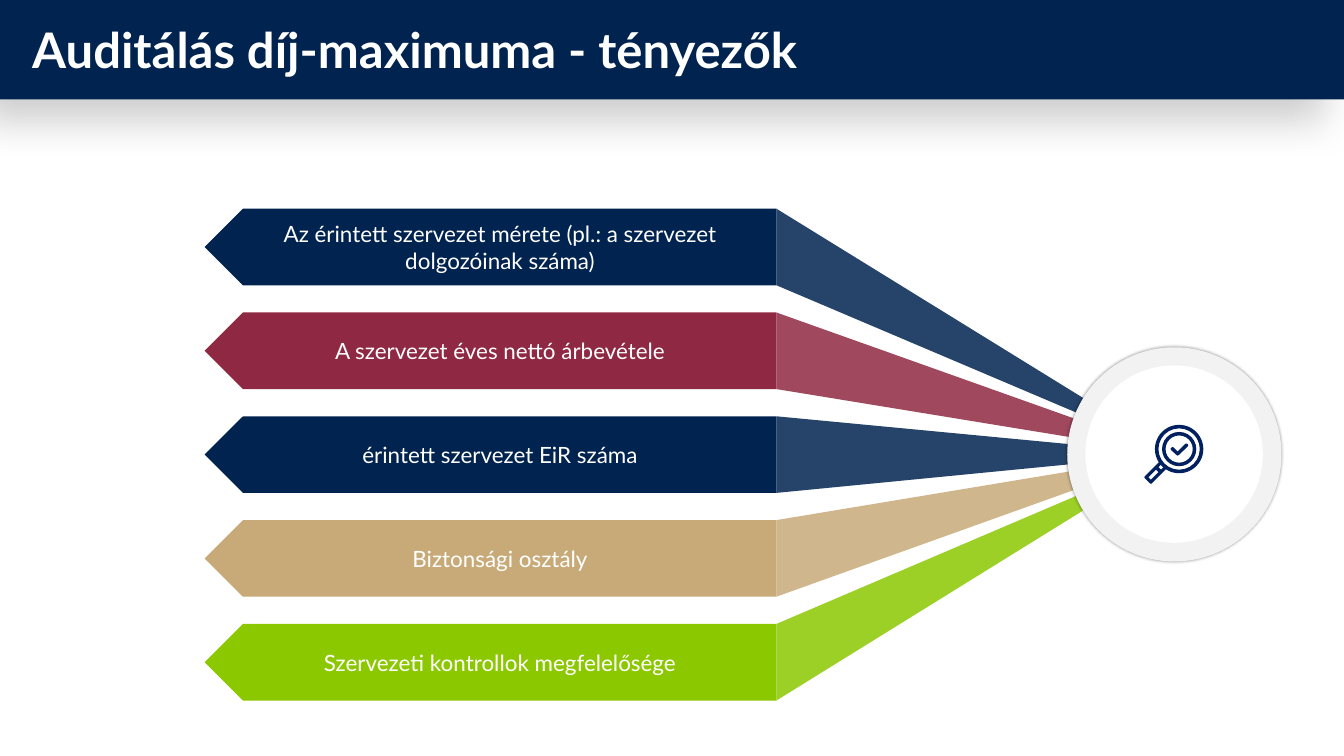
from dataclasses import dataclass

from lxml.etree import SubElement
from pptx import Presentation
from pptx.dml.color import RGBColor
from pptx.enum.shapes import MSO_SHAPE as Shape
from pptx.enum.text import MSO_ANCHOR as Anchor, MSO_AUTO_SIZE as AutoSize, PP_ALIGN as Align
from pptx.oxml.ns import qn
from pptx.util import Pt

PX = 9144  # EMU per px, at 100 px to the inch


@dataclass(frozen=True)
class Theme:
    font: str = "Lato"
    navy: str = "00234F"
    wine: str = "8F2842"
    sand: str = "C8AA78"
    green: str = "8BC800"
    icon: str = "002060"
    rim: str = "F2F2F2"
    white: str = "FFFFFF"
    black: str = "000000"
    title_size: int = 70
    label_size: int = 32


THEME = Theme()
PAGE_W, PAGE_H = 2666, 1500

# Arrow rows and the point where their beams meet
ROW_LEFT, ROW_TOP, ROW_W, ROW_H, ROW_PITCH = 406, 414, 1134, 152, 206
FOCUS = (2329, 901)
FACTORS = [
    ("Az érintett szervezet mérete (pl.: a szervezet dolgozóinak száma)", THEME.navy),
    ("A szervezet éves nettó árbevétele", THEME.wine),
    ("érintett szervezet EiR száma", THEME.navy),
    ("Biztonsági osztály", THEME.sand),
    ("Szervezeti kontrollok megfelelősége", THEME.green),
]

# Magnifier: lens rings as (radius, thickness), then outlines
LENS = (2339, 891)
RINGS = [(48, 7), (34, 7)]
HANDLE = [
    [(2299, 917), (2271, 945), (2270, 947), (2271, 949), (2281, 959),
     (2283, 960), (2285, 959), (2313, 931), (2306, 925)],
    [(2293, 932), (2298, 937), (2283, 952), (2278, 947)],
    [(2303, 922), (2308, 927), (2303, 932), (2298, 927)],
]
CHECK = [[(2353, 880), (2356, 881), (2357, 884), (2356, 886), (2338, 903),
          (2336, 904), (2334, 903), (2323, 893), (2322, 890), (2324, 888),
          (2326, 887), (2328, 888), (2336, 896), (2351, 881)]]


def set_values(target, values):
    for name, value in values.items():
        setattr(target, name, value)


def paint(shape, color, alpha=100):
    """Plain fill without outline or shadow."""
    shape.shadow.inherit = False
    shape.line.fill.background()
    shape.fill.solid()
    shape.fill.fore_color.rgb = RGBColor.from_string(color)
    if alpha < 100:
        fill_color = shape.fill._xPr.find(qn("a:solidFill"))[0]
        SubElement(fill_color, qn("a:alpha"), val=str(alpha * 1000))


def add_shadow(shape, alpha, blur, distance=0, angle=0):
    effects = shape._element.spPr.find(qn("a:effectLst"))
    shadow = SubElement(effects, qn("a:outerShdw"), blurRad=str(Pt(blur)),
                        dist=str(Pt(distance)), dir=str(angle * 60000), rotWithShape="0")
    color = SubElement(shadow, qn("a:srgbClr"), val=THEME.black)
    SubElement(color, qn("a:alpha"), val=str(alpha * 1000))


def add_block(parent, kind, left, top, width, height, color):
    shape = parent.shapes.add_shape(kind, *(n * PX for n in (left, top, width, height)))
    paint(shape, color)
    return shape


def add_outline(parent, contours, color, alpha=100):
    builder = parent.shapes.build_freeform(*contours[0][0], scale=PX)
    for index, contour in enumerate(contours):
        if index:
            builder.move_to(*contour[0])
        builder.add_line_segments(contour[1:], close=True)
    shape = builder.convert_to_shape()
    paint(shape, color, alpha)


def write(shape, text, size, align, frame_format, bold=False):
    frame = shape.text_frame
    set_values(frame, {"word_wrap": True, **frame_format})
    para = frame.paragraphs[0]
    para.alignment = align
    span = para.add_run()
    span.text = text
    set_values(span.font, {"name": THEME.font, "size": Pt(size), "bold": bold})
    span.font.color.rgb = RGBColor.from_string(THEME.white)


def add_header(page, text):
    bar = add_block(page, Shape.RECTANGLE, 0, 0, PAGE_W, 197, THEME.navy)
    add_shadow(bar, alpha=20, blur=60, distance=40, angle=135)
    box = page.shapes.add_textbox(*(n * PX for n in (54, 34, 2551, 128)))
    write(box, text, THEME.title_size, Align.LEFT,
          {"auto_size": AutoSize.SHAPE_TO_FIT_TEXT}, bold=True)


def add_factor(page, index, text, color):
    """Left-pointing label with a beam to the focus point."""
    group = page.shapes.add_group_shape()
    top, right = ROW_TOP + index * ROW_PITCH, ROW_LEFT + ROW_W
    arrow = add_block(group, Shape.PENTAGON, ROW_LEFT, top, ROW_W, ROW_H, color)
    arrow._element.spPr.xfrm.set("flipH", "1")
    write(arrow, text, THEME.label_size, Align.CENTER, {
        "vertical_anchor": Anchor.MIDDLE,
        "margin_left": 27 * PX, "margin_right": 27 * PX,
        "margin_top": 13 * PX, "margin_bottom": 13 * PX,
    })
    add_outline(group, [[FOCUS, (right, top + ROW_H), (right, top)]], color, alpha=85)


def add_hub(page):
    group = page.shapes.add_group_shape()
    rim = add_block(group, Shape.OVAL, 2117, 689, 425, 425, THEME.rim)
    add_shadow(rim, alpha=40, blur=5)
    add_block(group, Shape.OVAL, 2153, 725, 352, 352, THEME.white)


def add_magnifier(page):
    group = page.shapes.add_group_shape()
    add_outline(group, HANDLE, THEME.icon)
    for radius, thickness in RINGS:
        size = 2 * radius
        ring = add_block(group, Shape.DONUT, LENS[0] - radius, LENS[1] - radius,
                         size, size, THEME.icon)
        ring.adjustments[0] = thickness / size
    add_outline(group, CHECK, THEME.icon)


def main():
    deck = Presentation()
    set_values(deck, {"slide_width": PAGE_W * PX, "slide_height": PAGE_H * PX})
    page = deck.slides.add_slide(deck.slide_layouts[6])

    # Factors, then the hub that covers the beam tips
    for index, (text, color) in enumerate(FACTORS):
        add_factor(page, index, text, color)
    add_hub(page)

    # Title bar and icon
    add_header(page, "Auditálás díj-maximuma - tényezők")
    add_magnifier(page)
    deck.save("out.pptx")


if __name__ == "__main__":
    main()
